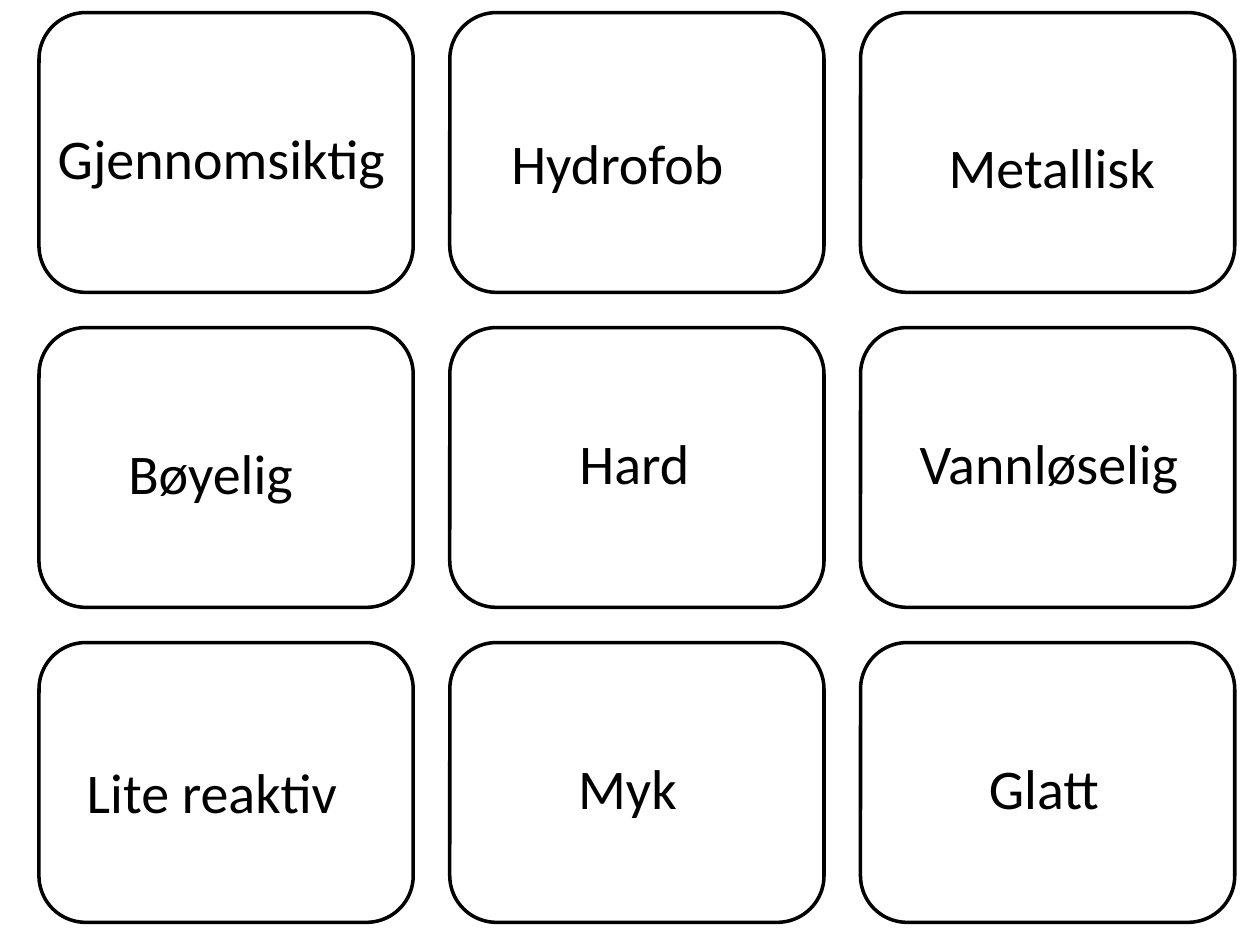
from pptx import Presentation
from pptx.dml.color import RGBColor
from pptx.enum.shapes import MSO_SHAPE as Shape
from pptx.enum.text import MSO_AUTO_SIZE as AutoSize
from pptx.util import Inches, Pt

BLACK = RGBColor(0, 0, 0)
WHITE = RGBColor(255, 255, 255)

ROWS = [
    [("Gjennomsiktig", 0.05, 0.83, 3.35), ("Hydrofob", 0.39, 0.87, 1.94), ("Metallisk", 0.6, 0.9, 2.22)],
    [("Bøyelig", 0.61, 0.83, 1.59), ("Hard", 0.93, 0.75, 1.49), ("Vannløselig", 0.37, 0.75, 2.36)],
    [("Lite reaktiv", 0.28, 0.86, 2.27), ("Myk", 0.92, 0.83, 1.46), ("Glatt", 0.92, 0.83, 2.06)],
]
LEFT, TOP = 0.31, 0.1
CARD_WIDTH, CARD_HEIGHT = 2.97, 2.22
GAP_X, GAP_Y = 0.29, 0.28
LABEL_HEIGHT = 0.64


def add_card(page, left, top):
    """Draw one outlined card."""
    card = page.shapes.add_shape(
        Shape.ROUNDED_RECTANGLE, Inches(left), Inches(top), Inches(CARD_WIDTH), Inches(CARD_HEIGHT)
    )
    card.shadow.inherit = False
    card.fill.solid()
    card.fill.fore_color.rgb = WHITE
    card.line.color.rgb = BLACK
    card.line.width = Pt(2)


def add_label(page, text, left, top, width):
    """Write the property name on a card."""
    box = page.shapes.add_textbox(Inches(left), Inches(top), Inches(width), Inches(LABEL_HEIGHT))
    box.text_frame.word_wrap = True
    box.text_frame.auto_size = AutoSize.SHAPE_TO_FIT_TEXT
    span = box.text_frame.paragraphs[0].add_run()
    span.text = text
    span.font.name = "Calibri"
    span.font.size = Pt(32)
    span.font.color.rgb = BLACK


def main():
    """Build the grid of material property cards."""
    deck = Presentation()
    deck.slide_width, deck.slide_height = Inches(10), Inches(7.5)
    page = deck.slides.add_slide(deck.slide_layouts[6])
    for row, labels in enumerate(ROWS):
        for column, (text, shift_x, shift_y, width) in enumerate(labels):
            left = LEFT + column * (CARD_WIDTH + GAP_X)
            top = TOP + row * (CARD_HEIGHT + GAP_Y)
            add_card(page, left, top)
            add_label(page, text, left + shift_x, top + shift_y, width)
    deck.save("out.pptx")


if __name__ == "__main__":
    main()
